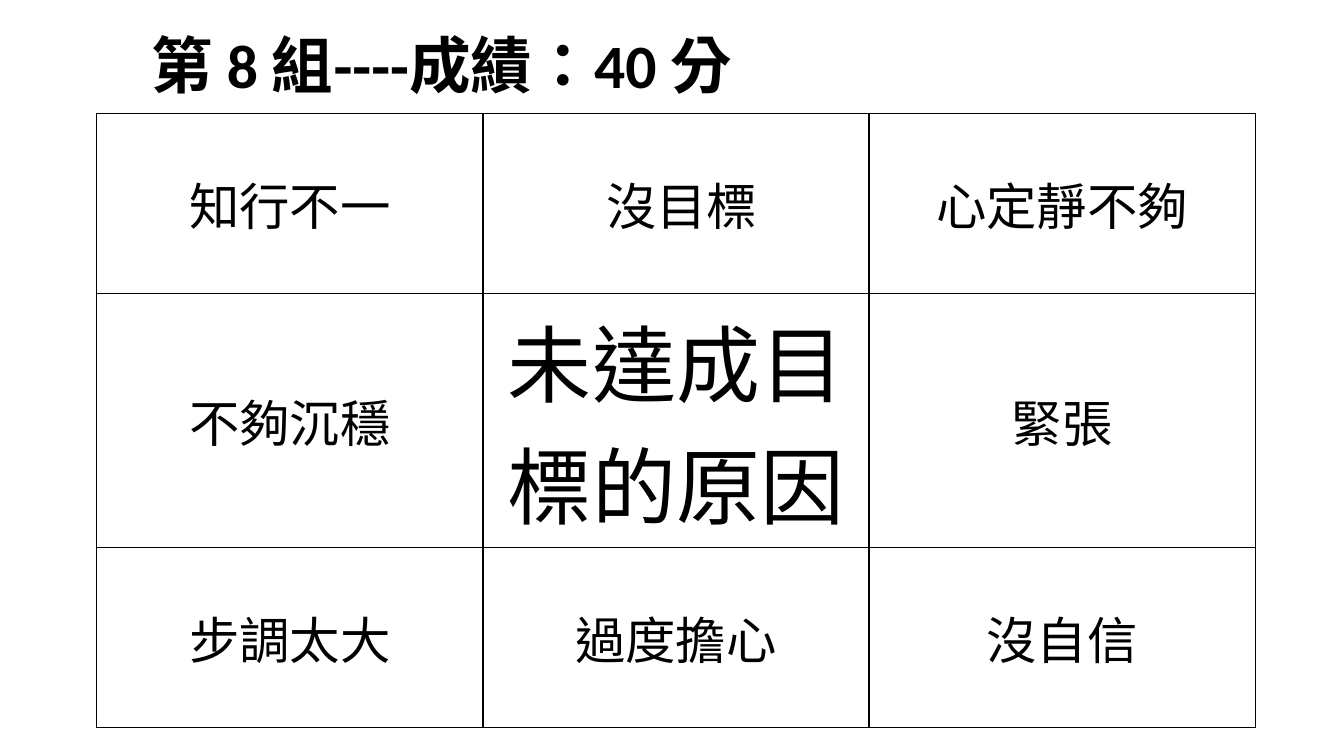
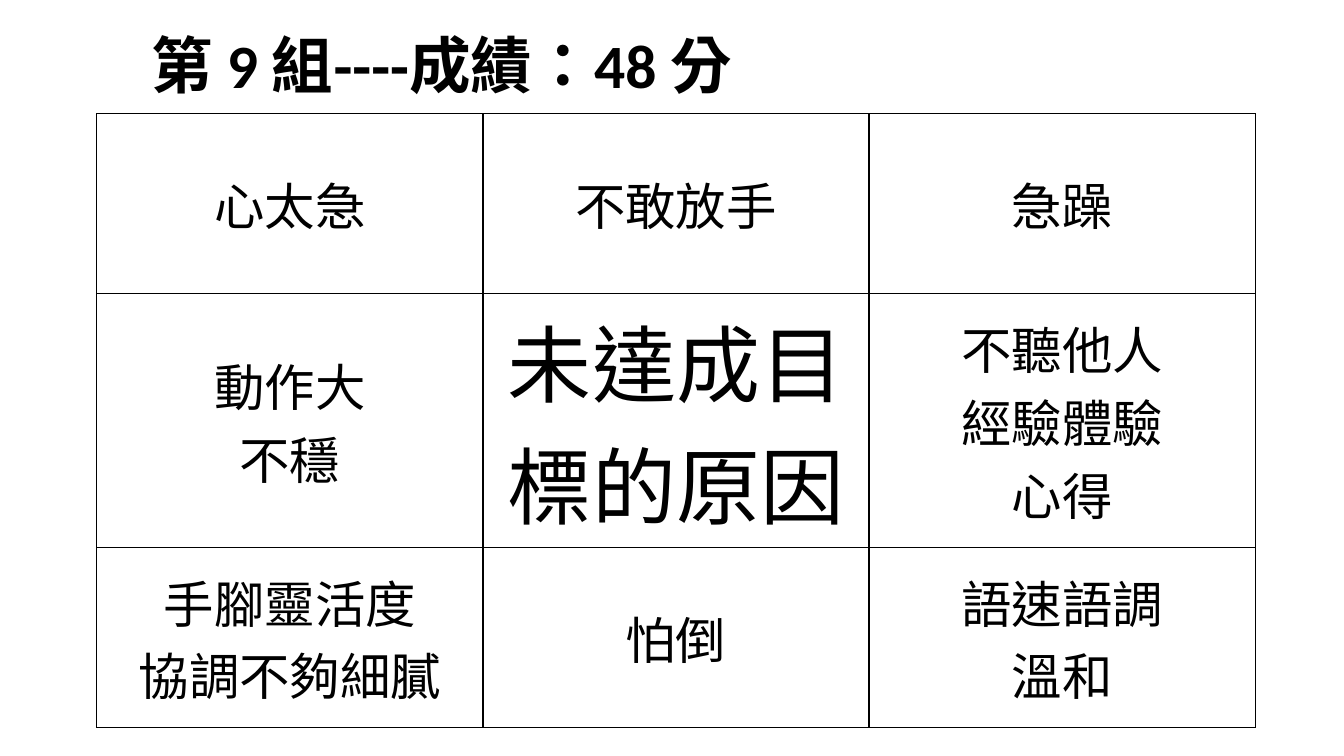
from dataclasses import dataclass

from lxml import etree
from pptx import Presentation
from pptx import util as u
from pptx.dml.color import RGBColor
from pptx.enum import lang, text
from pptx.oxml.ns import qn

COLORS = {"ink": "000000", "paper": "FFFFFF"}
BODY_FORMAT = {
    "name": "Calibri",
    "size": u.Pt(36),
    "bold": False,
    "language_id": lang.MSO_LANGUAGE_ID.TRADITIONAL_CHINESE,
}
CENTER_FORMAT = BODY_FORMAT | {"size": u.Pt(60)}
TITLE_FORMAT = BODY_FORMAT | {"size": u.Pt(44), "bold": True}

CENTER_TEXT = "未達成目標的原因"
COLUMN_WIDTH = u.Cm(9.73)
ROW_HEIGHTS = (u.Cm(4.53), u.Cm(6.4), u.Cm(4.53))


@dataclass(frozen=True)
class Group:
    """One group's score and the eight reasons around the center cell."""

    number: int
    score: int
    reasons: tuple[str, ...]


GROUPS = (
    Group(8, 40, ("知行不一", " 沒目標", "心定靜不夠", "不夠沉穩",
                  "緊張", "步調太大", "過度擔心", "沒自信")),
    Group(9, 48, ("心太急", "不敢放手", "急躁", "動作大\n不穩",
                  "不聽他人\n經驗體驗\n心得", "手腳靈活度\n協調不夠細膩",
                  "怕倒", "語速語調\n溫和")),
)


def write_text(frame, content: str, font_format: dict, alignment, spacing=None) -> None:
    """Fill a text frame, one paragraph per line of content."""
    frame.word_wrap = True
    frame.text = content
    for paragraph in frame.paragraphs:
        paragraph.alignment = alignment
        if spacing:
            paragraph.line_spacing = spacing
        for run in paragraph.runs:
            for name, value in font_format.items():
                setattr(run.font, name, value)
            run.font.color.rgb = RGBColor.from_string(COLORS["ink"])


def add_borders(cell) -> None:
    """Draw a thin line on all four sides of a cell."""
    properties = cell._tc.get_or_add_tcPr()
    for index, side in enumerate(("lnL", "lnR", "lnT", "lnB")):
        line = etree.Element(qn(f"a:{side}"), w=str(u.Pt(1)))
        fill = etree.SubElement(line, qn("a:solidFill"))
        etree.SubElement(fill, qn("a:srgbClr"), val=COLORS["ink"])
        properties.insert(index, line)


def add_title(slide, group: Group) -> None:
    box = slide.shapes.add_textbox(u.Cm(3.56), u.Cm(-0.1), u.Cm(26.5), u.Cm(3.68))
    box.text_frame.vertical_anchor = text.MSO_ANCHOR.MIDDLE
    title = f"第 {group.number} 組----成績：{group.score} 分"
    write_text(box.text_frame, title, TITLE_FORMAT, text.PP_ALIGN.LEFT, 0.9)


def add_reason_grid(slide, reasons: tuple[str, ...]) -> None:
    table = slide.shapes.add_table(
        3, 3, u.Cm(2.44), u.Cm(2.87), COLUMN_WIDTH * 3, sum(ROW_HEIGHTS)
    ).table
    table.first_row = table.horz_banding = False
    for column in table.columns:
        column.width = COLUMN_WIDTH
    for row, height in zip(table.rows, ROW_HEIGHTS):
        row.height = height

    # The shared heading sits in the middle of the reasons
    contents = (*reasons[:4], CENTER_TEXT, *reasons[4:])
    for cell, content in zip(table.iter_cells(), contents):
        cell.vertical_anchor = text.MSO_ANCHOR.MIDDLE
        cell.fill.solid()
        cell.fill.fore_color.rgb = RGBColor.from_string(COLORS["paper"])
        add_borders(cell)
        font_format = CENTER_FORMAT if content == CENTER_TEXT else BODY_FORMAT
        write_text(cell.text_frame, content, font_format, text.PP_ALIGN.CENTER)


def main() -> None:
    presentation = Presentation()
    presentation.slide_width = u.Cm(33.87)
    presentation.slide_height = u.Cm(19.05)
    for group in GROUPS:
        slide = presentation.slides.add_slide(presentation.slide_layouts[6])
        add_title(slide, group)
        add_reason_grid(slide, group.reasons)
    presentation.save("out.pptx")


if __name__ == "__main__":
    main()
